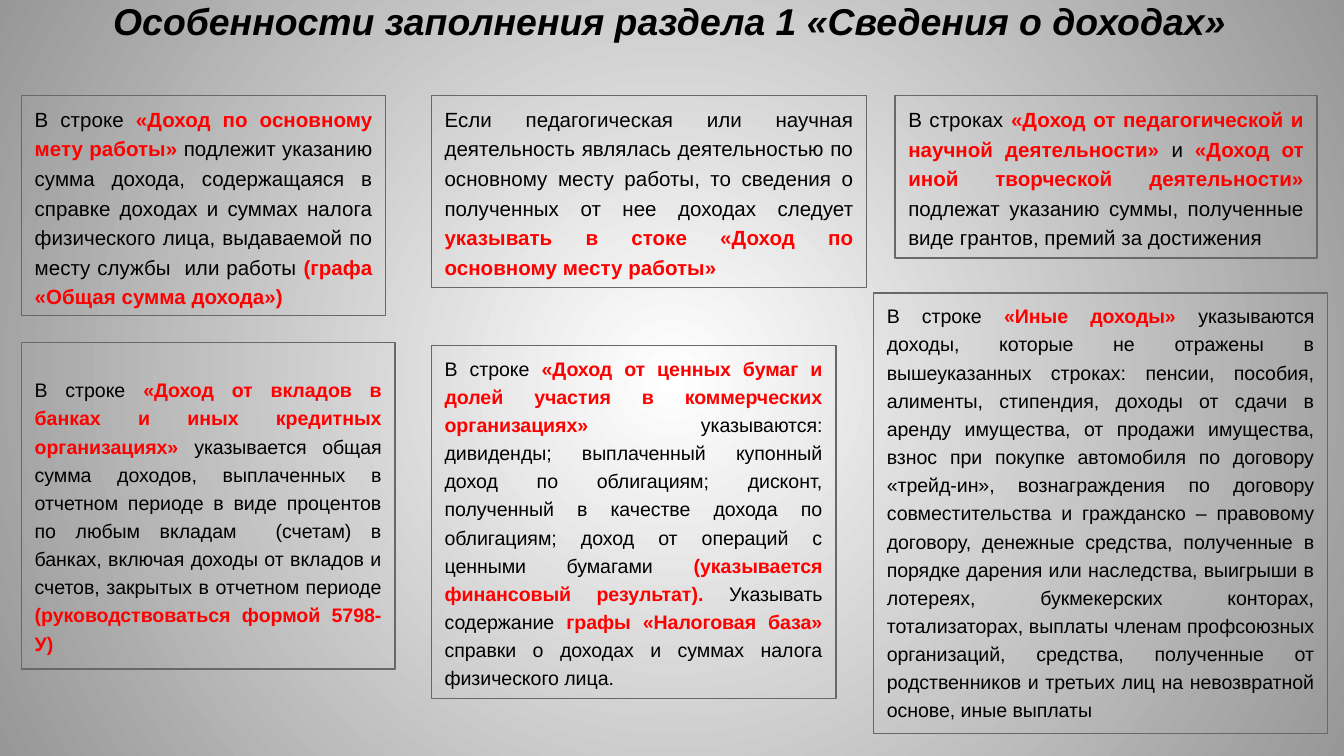
from lxml import etree
from pptx import Presentation
from pptx.dml.color import RGBColor
from pptx.enum.shapes import MSO_SHAPE
from pptx.enum.text import MSO_ANCHOR, PP_ALIGN
from pptx.oxml.ns import qn
from pptx.util import Inches, Pt

RECT = MSO_SHAPE.RECTANGLE
TOP = MSO_ANCHOR.TOP
CENTER, JUSTIFY = PP_ALIGN.CENTER, PP_ALIGN.JUSTIFY
FONT = "Arial"
COLORS = {"text": "000000", "accent": "FF0000", "line": "69676D",
          "inner": "FFFFFF", "outer": "979797"}


def color(name):
    return RGBColor.from_string(COLORS[name])


def add_run(par, text, size, tint="text", bold=False):
    run = par.add_run()
    run.text = text
    font = run.font
    font.name, font.size, font.bold = FONT, Pt(size), bold
    font.color.rgb = color(tint)
    return run


prs = Presentation()
prs.slide_width = Inches(10)
prs.slide_height = Inches(10 * 9 / 16)
slide = prs.slides.add_slide(prs.slide_layouts[6])

# Background: radial gradient, light in the middle
fill = slide.background.fill
fill.gradient()
for stop, name, pos in zip(fill.gradient_stops, ("inner", "outer"), (0, 1)):
    stop.color.rgb = color(name)
    stop.position = pos
grad = slide.background._cSld.find(".//" + qn("a:gradFill"))
grad.remove(grad.find(qn("a:lin")))
radial = etree.SubElement(grad, qn("a:path"), path="circle")
etree.SubElement(radial, qn("a:fillToRect"),
                 {side: "50000" for side in "ltrb"})

# Title
title = slide.shapes.add_textbox(Inches(0.16), Inches(-0.06),
                                 Inches(9.65), Inches(0.44))
title.text_frame.word_wrap = True
par = title.text_frame.paragraphs[0]
par.alignment = CENTER
run = add_run(par, "Особенности заполнения раздела 1 «Сведения о доходах»",
              20, bold=True)
run.font.italic = True

# Boxes: left, top, width, height, size, top inset, runs.
# Runs alternate between plain and accent, plain first.
BOXES = [
    (3.21, 0.71, 3.24, 1.43, 11, 0.05, [
        "Если педагогическая или научная деятельность являлась "
        "деятельностью по основному месту работы, то сведения о "
        "полученных от нее доходах следует ",
        "указывать в стоке «Доход по основному месту работы»"]),
    (0.16, 0.71, 2.71, 1.64, 11, 0.05, [
        "В строке ",
        "«Доход по основному мету работы» ",
        "подлежит указанию сумма дохода, содержащаяся в справке доходах и "
        "суммах налога физического лица, выдаваемой по месту службы  или "
        "работы ",
        "(графа «Общая сумма дохода»)"]),
    (6.66, 0.71, 3.14, 1.21, 11, 0.05, [
        "В строках ",
        "«Доход от педагогической и научной деятельности» ",
        "и ",
        "«Доход от иной творческой деятельности» ",
        "подлежат указанию суммы, полученные виде грантов, премий за "
        "достижения"]),
    (0.16, 2.55, 2.78, 2.43, 10.5, 0.23, [
        "В строке ",
        "«Доход от вкладов в банках и иных кредитных организациях» ",
        "указывается общая сумма доходов, выплаченных в отчетном периоде в "
        "виде процентов по любым вкладам  (счетам) в банках, включая доходы "
        "от вкладов и счетов, закрытых в отчетном периоде ",
        "(руководствоваться формой 5798-У)"]),
    (3.21, 2.57, 3.01, 2.63, 10.5, 0.05, [
        "В строке ",
        "«Доход от ценных бумаг и долей участия в коммерческих "
        "организациях» ",
        "указываются: дивиденды; выплаченный купонный доход по облигациям; "
        "дисконт, полученный в качестве дохода по облигациям; доход от "
        "операций с ценными бумагами ",
        "(указывается финансовый результат). ",
        "Указывать содержание",
        " графы «Налоговая база» ",
        "справки о доходах и суммах налога физического лица."]),
    (6.5, 2.18, 3.38, 3.28, 10.5, 0.05, [
        "В строке ",
        "«Иные доходы» ",
        "указываются доходы, которые не отражены в вышеуказанных строках: "
        "пенсии, пособия, алименты, стипендия, доходы от сдачи в аренду "
        "имущества, от продажи имущества, взнос при покупке автомобиля по "
        "договору «трейд-ин», вознаграждения по договору совместительства и "
        "гражданско – правовому договору, денежные средства, полученные в "
        "порядке дарения или наследства, выигрыши в лотереях, букмекерских "
        "конторах, тотализаторах, выплаты членам профсоюзных организаций, "
        "средства, полученные от родственников и третьих лиц на "
        "невозвратной основе, иные выплаты "]),
]

for left, top, width, height, size, inset, parts in BOXES:
    box = slide.shapes.add_shape(RECT, Inches(left), Inches(top),
                                 Inches(width), Inches(height))
    box.shadow.inherit = False
    box.fill.background()
    box.line.color.rgb = color("line")
    box.line.width = Pt(0.75)
    frame = box.text_frame
    frame.word_wrap = True
    frame.vertical_anchor = TOP
    frame.margin_top = Inches(inset)
    par = frame.paragraphs[0]
    par.alignment = JUSTIFY
    par.line_spacing = 1.2
    for i, text in enumerate(parts):
        accent = i % 2 == 1
        add_run(par, text, size, "accent" if accent else "text", accent)

prs.save("out.pptx")
